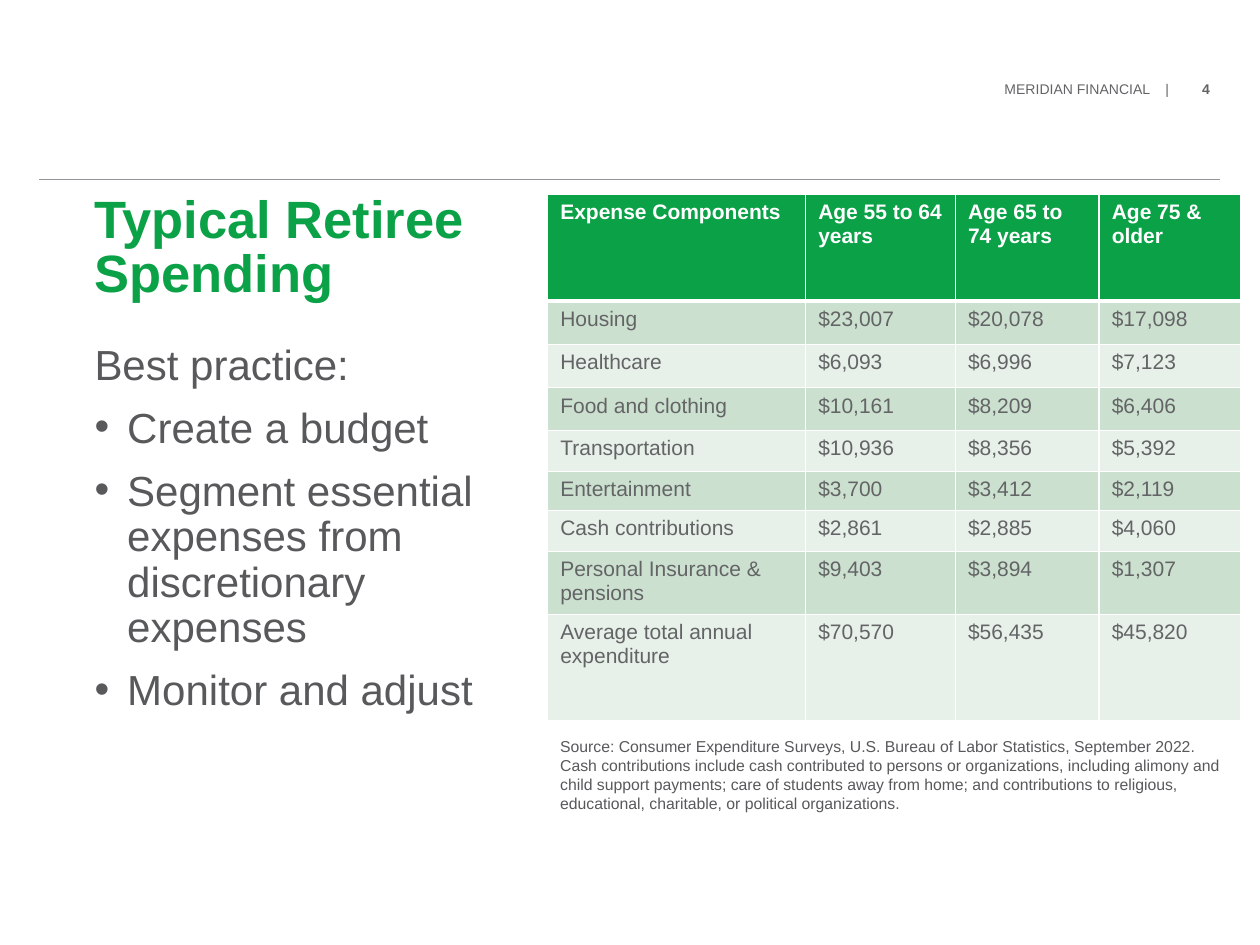
from lxml import etree
from pptx import Presentation
from pptx.dml.color import RGBColor
from pptx.enum import shapes
from pptx.oxml import ns
from pptx.util import Pt

THEME = {
    "font": "Arial",
    "green": "0AA147", "text": "58595B", "gray": "636466", "rule": "929497",
    "white": "FFFFFF", "bands": ("CCE0CF", "E7F0E9"),
    "title": 30, "body": 24, "table": 12, "source": 9, "header": 8,
}

HEADER = "MERIDIAN FINANCIAL    |\t"
PAGE_NUMBER = "4"
TITLE = "Typical Retiree Spending"
LEAD = "Best practice:"
PRACTICES = [
    "Create a budget",
    "Segment essential expenses from discretionary expenses",
    "Monitor and adjust",
]
SOURCE = (
    "Source: Consumer Expenditure Surveys, U.S. Bureau of Labor Statistics, "
    "September 2022. Cash contributions include cash contributed to persons or "
    "organizations, including alimony and child support payments; care of students "
    "away from home; and contributions to religious, educational, charitable, or "
    "political organizations."
)
EXPENSES = [
    ("Expense Components", "Age 55 to 64 years", "Age 65 to 74 years", "Age 75 & older"),
    ("Housing", "$23,007", "$20,078", "$17,098"),
    ("Healthcare", "$6,093", "$6,996", "$7,123"),
    ("Food and clothing", "$10,161", "$8,209", "$6,406"),
    ("Transportation", "$10,936", "$8,356", "$5,392"),
    ("Entertainment", "$3,700", "$3,412", "$2,119"),
    ("Cash contributions", "$2,861", "$2,885", "$4,060"),
    ("Personal Insurance & pensions", "$9,403", "$3,894", "$1,307"),
    ("Average total annual expenditure", "$70,570", "$56,435", "$45,820"),
]
COLUMN_WIDTHS = (147.4, 85.6, 82.2, 80.6)
ROW_HEIGHTS = (61, 24.8, 24.8, 24.5, 23.4, 22.3, 23.4, 36, 61)

LEFT, TOP = 54, 111
TABLE_LEFT, TABLE_WIDTH = 313, sum(COLUMN_WIDTHS)


def style(font, size, color, bold=False):
    font.name, font.size, font.bold = THEME["font"], Pt(size), bold
    font.color.rgb = RGBColor.from_string(color)


def add_text(slide, box, paragraphs, size, color, bold=False, inset=False):
    frame = slide.shapes.add_textbox(*map(Pt, box)).text_frame
    frame.word_wrap = True
    if not inset:
        frame.margin_left = frame.margin_right = frame.margin_top = frame.margin_bottom = 0
    frame.text = "\n".join(paragraphs)
    for paragraph in frame.paragraphs:
        for run in paragraph.runs:
            style(run.font, size, color, bold)
    return frame


def add_bullet(paragraph, indent):
    properties = paragraph._p.get_or_add_pPr()
    properties.set("marL", str(Pt(indent)))
    properties.set("indent", str(-Pt(indent)))
    etree.SubElement(properties, ns.qn("a:buFont"), typeface=THEME["font"])
    etree.SubElement(properties, ns.qn("a:buChar"), char="•")


def add_border(cell, side, width):
    line = etree.SubElement(
        cell._tc.get_or_add_tcPr(), ns.qn(f"a:ln{side}"), w=str(Pt(width)))
    fill = etree.SubElement(line, ns.qn("a:solidFill"))
    etree.SubElement(fill, ns.qn("a:srgbClr"), val=THEME["white"])


def add_page_header(slide):
    frame = add_text(slide, (574, 46, 125, 11), [HEADER], THEME["header"], THEME["gray"])
    paragraph = frame.paragraphs[0]
    tabs = etree.SubElement(paragraph._p.get_or_add_pPr(), ns.qn("a:tabLst"))
    etree.SubElement(tabs, ns.qn("a:tab"), pos=str(Pt(113)), algn="l")
    number = paragraph.add_run()
    number.text = PAGE_NUMBER
    style(number.font, THEME["header"], THEME["gray"], True)

    rule = slide.shapes.add_connector(
        shapes.MSO_CONNECTOR.STRAIGHT, Pt(22.3), Pt(102.4), Pt(697), Pt(102.4))
    rule.line.color.rgb = RGBColor.from_string(THEME["rule"])
    rule.line.width = Pt(0.5)
    etree.SubElement(rule._element.spPr, ns.qn("a:effectLst"))


def add_practices(slide):
    title = add_text(slide, (LEFT, TOP, 300, 75.6), [TITLE],
                     THEME["title"], THEME["green"], True)
    title.paragraphs[0].line_spacing = Pt(31)
    body = add_text(slide, (LEFT, 196, 229, 325), [LEAD, *PRACTICES],
                    THEME["body"], THEME["text"])
    for index, paragraph in enumerate(body.paragraphs):
        paragraph.line_spacing = Pt(26)
        if index:
            paragraph.space_before = Pt(10)
            add_bullet(paragraph, 18.7)


def add_expenses(slide):
    table = slide.shapes.add_table(
        len(EXPENSES), len(COLUMN_WIDTHS), Pt(TABLE_LEFT), Pt(TOP),
        Pt(TABLE_WIDTH), Pt(sum(ROW_HEIGHTS))).table
    for column, width in zip(table.columns, COLUMN_WIDTHS):
        column.width = Pt(width)
    for row, height in zip(table.rows, ROW_HEIGHTS):
        row.height = Pt(height)
    for row_index, values in enumerate(EXPENSES):
        heading = row_index == 0
        fill = THEME["green"] if heading else THEME["bands"][(row_index - 1) % 2]
        color = THEME["white"] if heading else THEME["gray"]
        borders = {"L": 1, "R": 1, "T": 3 if row_index == 1 else 1, "B": 3 if heading else 1}
        for column_index, value in enumerate(values):
            cell = table.cell(row_index, column_index)
            cell.text = value
            style(cell.text_frame.paragraphs[0].runs[0].font, THEME["table"], color, heading)
            for side, width in borders.items():
                add_border(cell, side, width)
            cell.fill.solid()
            cell.fill.fore_color.rgb = RGBColor.from_string(fill)


def main():
    presentation = Presentation()
    presentation.slide_width, presentation.slide_height = Pt(720), Pt(540)
    slide = presentation.slides.add_slide(presentation.slide_layouts[6])
    add_page_header(slide)
    add_practices(slide)
    add_text(slide, (TABLE_LEFT, 417.6, TABLE_WIDTH, 51), [SOURCE],
             THEME["source"], THEME["text"], inset=True)
    add_expenses(slide)
    presentation.save("out.pptx")


if __name__ == "__main__":
    main()
